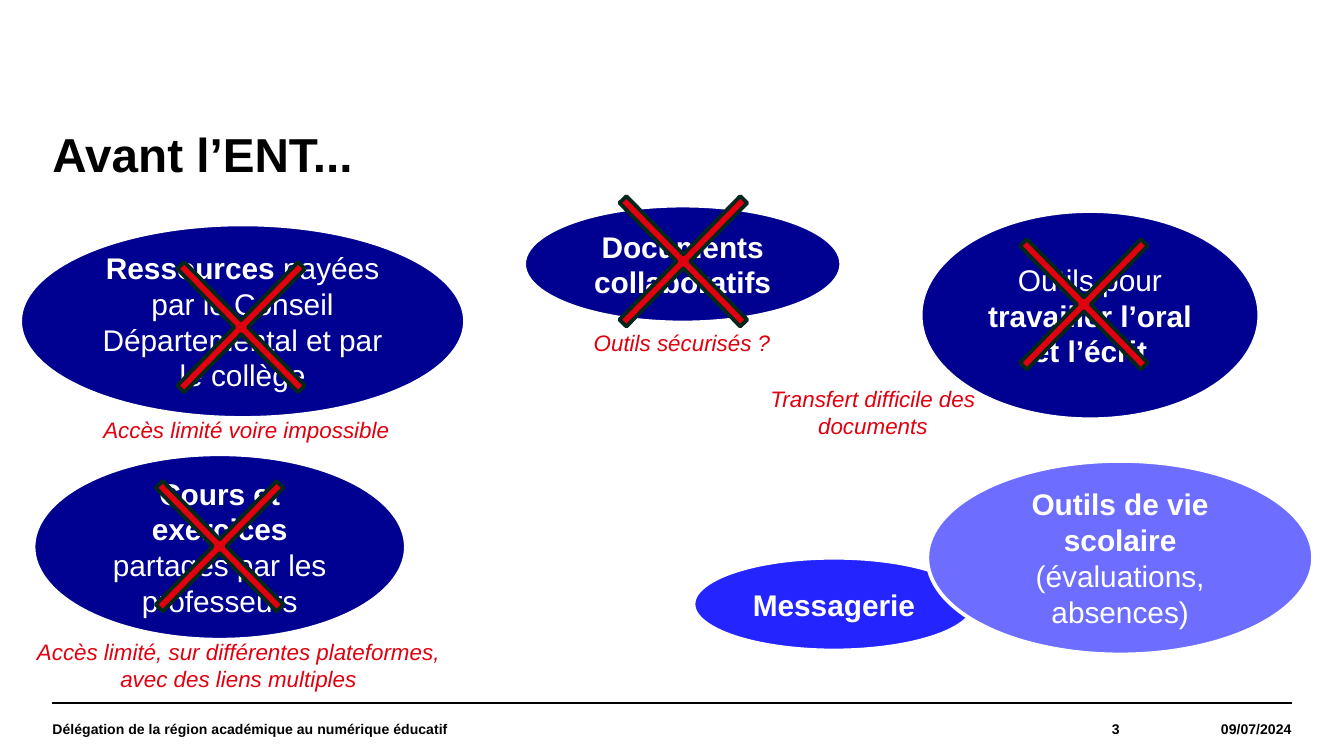
from lxml import etree
from pptx import Presentation
from pptx.dml.color import RGBColor
from pptx.enum.shapes import MSO_CONNECTOR, MSO_SHAPE
from pptx.enum.text import MSO_ANCHOR, MSO_AUTO_SIZE, PP_ALIGN
from pptx.oxml.ns import qn
from pptx.util import Inches, Pt

LEFT, CENTER, RIGHT = PP_ALIGN.LEFT, PP_ALIGN.CENTER, PP_ALIGN.RIGHT
TOP, MIDDLE = MSO_ANCHOR.TOP, MSO_ANCHOR.MIDDLE
NO_FIT = MSO_AUTO_SIZE.NONE
OVAL, CROSS = MSO_SHAPE.OVAL, MSO_SHAPE.MATH_MULTIPLY
STRAIGHT = MSO_CONNECTOR.STRAIGHT

BLACK = RGBColor(0x00, 0x00, 0x00)
WHITE = RGBColor(0xFF, 0xFF, 0xFF)
NAVY = RGBColor(0x00, 0x00, 0x91)
BLUE = RGBColor(0x24, 0x24, 0xFF)
LIGHT_BLUE = RGBColor(0x6D, 0x6D, 0xFF)
RED = RGBColor(0xE1, 0x00, 0x0F)
DARK_GREEN = RGBColor(0x00, 0x27, 0x1C)

CROSS_W, CROSS_H = 1.73, 1.77

TOOLS = [
    ((5.16, 4.15, 2.09, 0.69), BLUE, [("Messagerie", True)]),
    ((6.9, 3.43, 2.87, 1.44), LIGHT_BLUE,
     [("Outils de vie scolaire ", True), ("(évaluations, absences)", False)]),
    ((0.15, 1.67, 3.31, 1.44), NAVY,
     [("Ressources ", True),
      ("payées par le Conseil Départemental et par le collège", False)]),
    ((3.9, 1.53, 2.36, 0.87), NAVY, [("Documents collaboratifs", True)]),
    ((6.85, 1.57, 2.52, 1.55), NAVY,
     [("Outils pour ", False), ("travailler l’oral et l’écrit", True)]),
    ((0.25, 3.38, 2.77, 1.38), NAVY,
     [("Cours et exercices ", True), ("partagés par les professeurs", False)]),
]
CROSSES = [(4.22, 1.06), (0.93, 1.55), (0.77, 3.18), (7.2, 1.38)]
LIMITS = [
    ((0.67, 3.05, 2.35, 0.3), "Accès limité voire impossible", LEFT),
    ((0.12, 4.7, 3.31, 0.5),
     "Accès limité, sur différentes plateformes, avec des liens multiples",
     CENTER),
    ((3.42, 2.4, 3.31, 0.3), "Outils sécurisés ?", CENTER),
    ((5.45, 2.82, 2.09, 0.5), "Transfert difficile des documents", CENTER),
]


def inches(box):
    """Convert a box of numbers to lengths."""
    return [Inches(v) for v in box]


def set_font(font, size, color):
    """Apply the slide's typeface with a size and colour."""
    font.name, font.size = "Arial", Pt(size)
    font.color.rgb = color


def clear_insets(tf):
    """Remove the inner margins of a text frame."""
    tf.margin_left = tf.margin_right = tf.margin_top = tf.margin_bottom = 0


def add_title(s, box, text):
    """Place and format the title placeholder."""
    sp = s.shapes.title
    sp.left, sp.top, sp.width, sp.height = inches(box)
    tf = sp.text_frame
    tf.text = text
    tf.auto_size, tf.vertical_anchor = NO_FIT, TOP
    clear_insets(tf)
    p = tf.paragraphs[0]
    p.alignment, p.line_spacing = LEFT, 0.9
    set_font(p.font, 25.5, BLACK)
    p.font.bold = True


def add_filled(s, kind, box, fill, line):
    """Add a preset shape with a solid fill and a 2 pt outline."""
    sp = s.shapes.add_shape(kind, *inches(box))
    sp.shadow.inherit = False
    sp.fill.solid()
    sp.fill.fore_color.rgb = fill
    sp.line.color.rgb = line
    sp.line.width = Pt(2)
    return sp


def add_tool(s, box, fill, runs):
    """Add an ellipse naming a tool, with bold and regular runs."""
    tf = add_filled(s, OVAL, box, fill, WHITE).text_frame
    tf.word_wrap, tf.vertical_anchor = True, MIDDLE
    p = tf.paragraphs[0]
    p.alignment = CENTER
    set_font(p.font, 16, WHITE)
    for text, bold in runs:
        r = p.add_run()
        r.text = text
        set_font(r.font, 16, WHITE)
        r.font.bold = bold


def add_cross(s, x, y):
    """Add a thin red cross over a tool."""
    sp = add_filled(s, CROSS, (x, y, CROSS_W, CROSS_H), RED, DARK_GREEN)
    sp.adjustments[0] = 0.042


def add_text(s, box, text, size, color, align):
    """Add a one-paragraph text box and return its frame."""
    tf = s.shapes.add_textbox(*inches(box)).text_frame
    tf.word_wrap = True
    p = tf.paragraphs[0]
    p.text, p.alignment = text, align
    set_font(p.font, size, color)
    return tf


def add_limit(s, box, text, align):
    """Add a red italic remark under a tool."""
    tf = add_text(s, box, text, 12, RED, align)
    tf.word_wrap = align == CENTER
    tf.paragraphs[0].font.italic = True


def add_footer(s, x, y, w, h):
    """Add the rule, the department, the page number and the date."""
    rule = s.shapes.add_connector(STRAIGHT, *inches((x, y, x + w, y)))
    rule.line.color.rgb = BLACK
    rule.line.width = Pt(0.8)
    etree.SubElement(rule._element.spPr, qn("a:effectLst"))
    date_w, number_w = 1.28, 1.48
    date_x = x + w - date_w
    parts = [
        ((x, y + 0.07, 3.54, 0.25),
         "Délégation de la région académique au numérique éducatif", LEFT),
        ((date_x - number_w, y, number_w, h), "3", RIGHT),
        ((date_x, y, date_w, h), "09/07/2024", RIGHT),
    ]
    for box, text, align in parts:
        tf = add_text(s, box, text, 7.5, BLACK, align)
        tf.vertical_anchor = MIDDLE
        clear_insets(tf)
        tf.paragraphs[0].font.bold = True


def main():
    """Build the slide and save it."""
    prs = Presentation()
    prs.slide_width = Inches(10)
    prs.slide_height = prs.slide_width * 9 // 16
    s = prs.slides.add_slide(prs.slide_layouts[5])
    add_footer(s, 0.39, 5.23, 9.22, 0.39)
    add_title(s, (0.39, 0.98, 9.21, 0.79), "Avant l’ENT...")
    for box, fill, runs in TOOLS:
        add_tool(s, box, fill, runs)
    for x, y in CROSSES:
        add_cross(s, x, y)
    for box, text, align in LIMITS:
        add_limit(s, box, text, align)
    prs.save("out.pptx")


if __name__ == "__main__":
    main()
